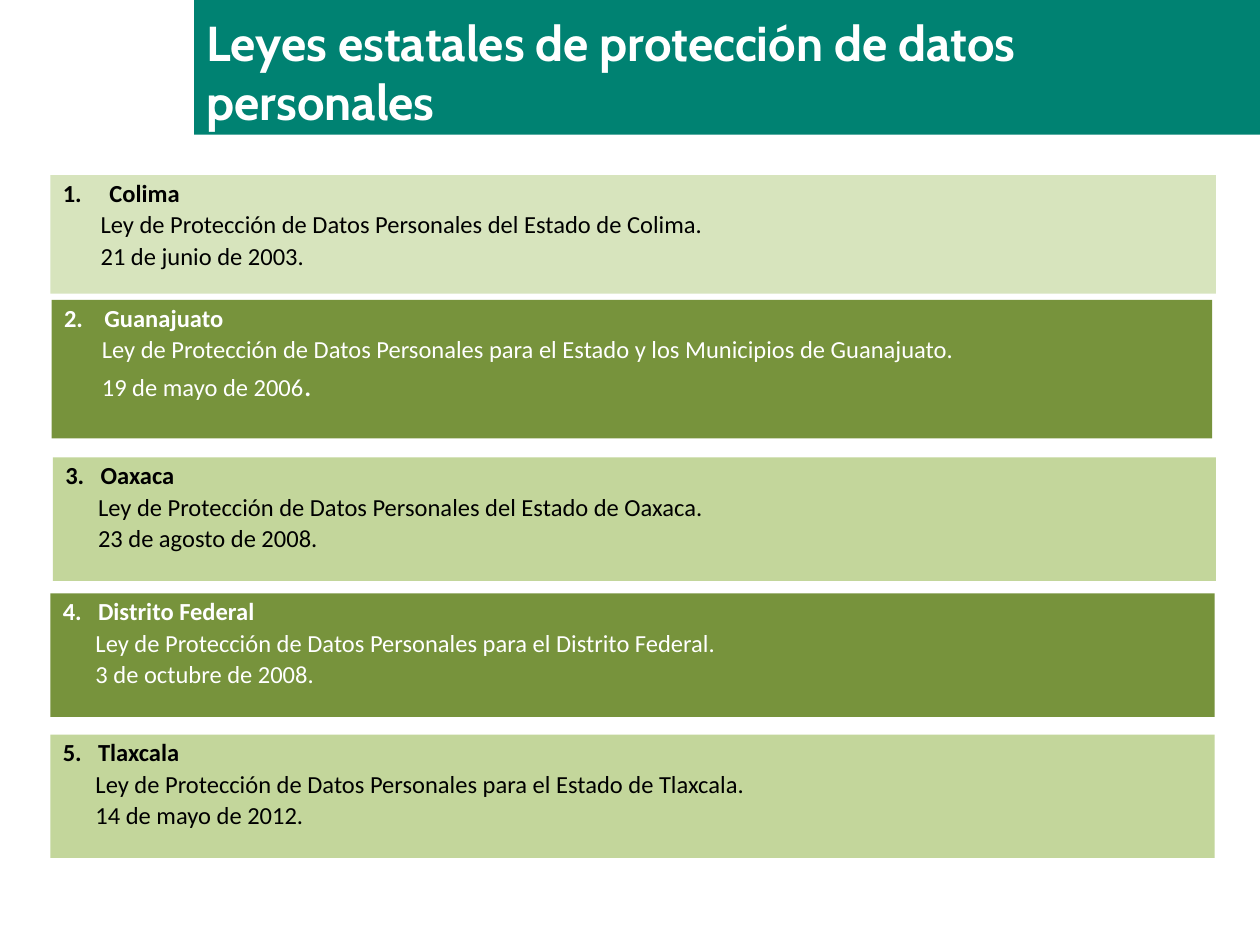
from lxml import etree
from pptx import Presentation
from pptx.dml.color import RGBColor
from pptx.enum import shapes, text
from pptx.oxml.ns import qn
from pptx.util import Inches, Pt

TEAL, WHITE, BLACK = "008272", "FFFFFF", "000000"
PALE, LIGHT, OLIVE = "D7E4BD", "C3D69B", "77933C"

# box, fill, text colour, heading indent, detail indent, number font, lines
LAWS = [
    ((0.4, 1.39, 9.25, 0.94), PALE, BLACK, 0.37, 0.3, "Calibri",
     ("Colima",
      "Ley de Protección de Datos Personales del Estado de Colima.",
      "21 de junio de 2003.")),
    ((0.41, 2.38, 9.21, 1.1), OLIVE, WHITE, 0.32, 0.3, "Cabin",
     ("Guanajuato",
      "Ley de Protección de Datos Personales para el Estado y los Municipios de Guanajuato.",
      "19 de mayo de 2006", ".")),
    ((0.42, 3.63, 9.23, 0.98), LIGHT, BLACK, 0.28, 0.26, "Calibri",
     ("Oaxaca",
      "Ley de Protección de Datos Personales del Estado de Oaxaca.",
      "23 de agosto de 2008.")),
    ((0.4, 4.71, 9.24, 0.98), OLIVE, WHITE, 0.28, 0.26, "Calibri",
     ("Distrito Federal",
      "Ley de Protección de Datos Personales para el Distrito Federal.",
      "3 de octubre de 2008.")),
    ((0.4, 5.83, 9.24, 0.98), LIGHT, BLACK, 0.28, 0.26, "Calibri",
     ("Tlaxcala",
      "Ley de Protección de Datos Personales para el Estado de Tlaxcala.",
      "14 de mayo de 2012.")),
]


def colour(value):
    return RGBColor.from_string(value)


def add_panel(page, box, fill):
    panel = page.shapes.add_shape(
        shapes.MSO_SHAPE.RECTANGLE, *(Inches(side) for side in box))
    panel.shadow.inherit = False
    panel.fill.solid()
    panel.fill.fore_color.rgb = colour(fill)
    panel.line.fill.background()
    return panel


def add_span(para, wording, size, ink, bold=False, font="Calibri"):
    span = para.add_run()
    span.text = wording
    span.font.name = font
    span.font.size = Pt(size)
    span.font.bold = bold
    span.font.color.rgb = colour(ink)


def set_indent(para, left, number=None, font="Calibri"):
    """Indent a paragraph; with a number, hang it in front of the text."""
    properties = para._p.get_or_add_pPr()
    properties.set("marL", str(Inches(left)))
    properties.set("indent", str(-Inches(left) if number else 0))
    if number:
        etree.SubElement(properties, qn("a:buFont"), typeface=font)
        etree.SubElement(properties, qn("a:buAutoNum"),
                         type="arabicPeriod", startAt=str(number))


def add_header(page, box):
    band = add_panel(page, box, TEAL)
    title = page.shapes.title
    title.element.addprevious(band.element)  # band lies behind the title
    left, top, width, height = box
    title.left, title.top = Inches(left), Inches(top + 0.05)
    title.width, title.height = Inches(width - 0.03), Inches(height - 0.03)
    frame = title.text_frame
    frame.word_wrap = True
    frame.auto_size = text.MSO_AUTO_SIZE.NONE
    frame.vertical_anchor = text.MSO_ANCHOR.TOP
    para = frame.paragraphs[0]
    para.alignment = text.PP_ALIGN.LEFT
    add_span(para, "Leyes estatales de protección de datos personales",
             28, WHITE, True, "Cabin")


def add_law(page, number, box, fill, ink, hang, inset, number_font, lines):
    frame = add_panel(page, box, fill).text_frame
    frame.word_wrap = True
    frame.vertical_anchor = text.MSO_ANCHOR.TOP
    state, law, date, *stop = lines
    for index, wording in enumerate((state, law, date)):
        heading = index == 0
        para = frame.paragraphs[0] if heading else frame.add_paragraph()
        set_indent(para, hang if heading else inset,
                   number if heading else None, number_font)
        para.alignment = text.PP_ALIGN.JUSTIFY
        para.line_spacing = 0.9
        if not heading:
            para.space_before = Pt(2.8)
        add_span(para, wording, 14, ink, heading)
    # A larger full stop may close the date
    for mark in stop:
        add_span(para, mark, 18, ink)


def main():
    deck = Presentation()
    deck.slide_width, deck.slide_height = Inches(10), Inches(7.5)
    page = deck.slides.add_slide(deck.slide_layouts.get_by_name("Title Only"))
    add_header(page, (1.54, 0, 8.46, 1.07))
    for number, law in enumerate(LAWS, start=1):
        add_law(page, number, *law)
    deck.save("out.pptx")


if __name__ == "__main__":
    main()
